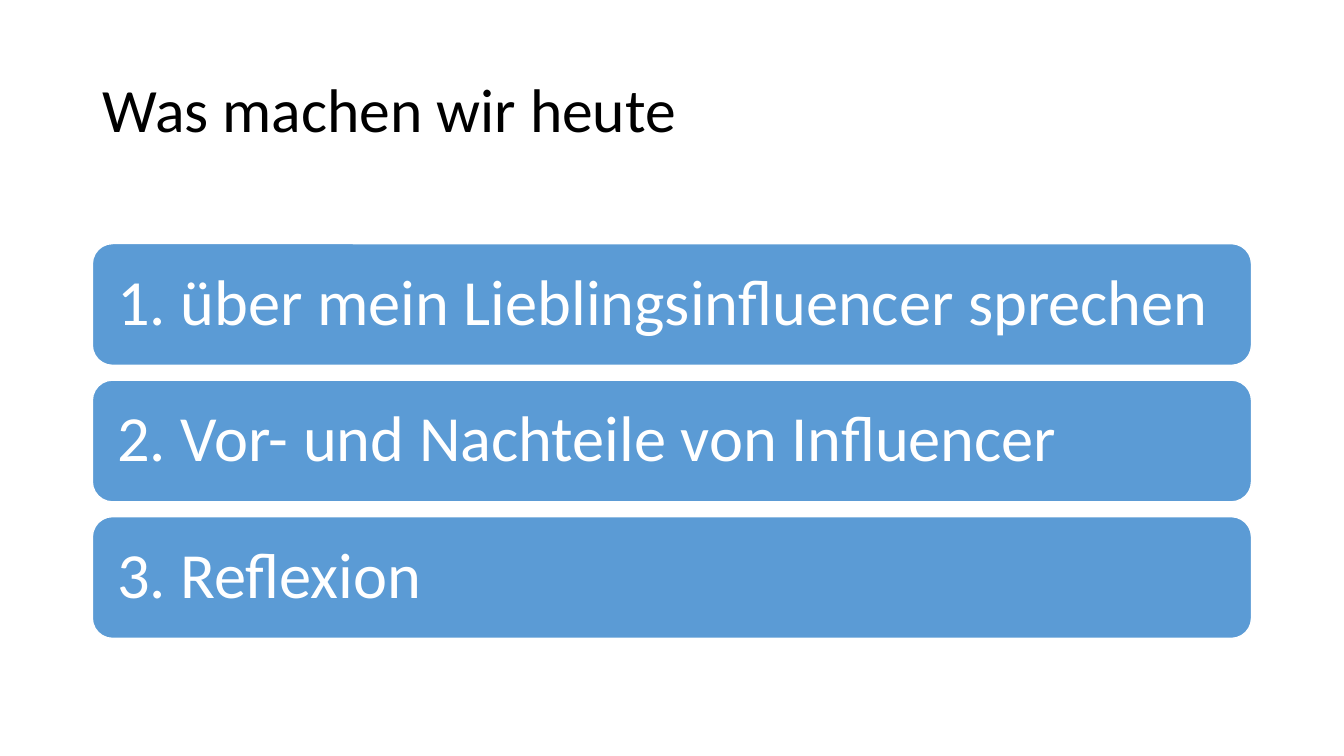
from pptx import Presentation
from pptx.dml.color import RGBColor
from pptx.enum.shapes import MSO_SHAPE
from pptx.enum.text import MSO_ANCHOR, PP_ALIGN
from pptx.util import Pt

PX = 9525  # EMU per px, 96 px to the inch
FONT = "Calibri"
BLACK = RGBColor(0x00, 0x00, 0x00)
WHITE = RGBColor(0xFF, 0xFF, 0xFF)
BLUE = RGBColor(0x5B, 0x9B, 0xD5)

LEFT, WIDTH = 88, 1104
CARD_TOP, CARD_HEIGHT, CARD_STEP = 232, 116, 130
CARD_INSET = 18
AGENDA = [
    "1. über mein Lieblingsinfluencer sprechen",
    "2. Vor- und Nachteile von Influencer",
    "3. Reflexion",
]


def write_line(frame, text, size, color):
    """Fill a text frame with one left-aligned, vertically centred line."""
    frame.word_wrap = True
    frame.vertical_anchor = MSO_ANCHOR.MIDDLE
    para = frame.paragraphs[0]
    para.alignment = PP_ALIGN.LEFT
    para.line_spacing = 0.9
    span = para.add_run()
    span.text = text
    span.font.name = FONT
    span.font.size = Pt(size)
    span.font.color.rgb = color


def set_title(page, text):
    title = page.shapes.title
    title.left, title.top = LEFT * PX, 38 * PX
    title.width, title.height = WIDTH * PX, 139 * PX
    write_line(title.text_frame, text, 44, BLACK)


def add_card(page, top, text):
    card = page.shapes.add_shape(
        MSO_SHAPE.ROUNDED_RECTANGLE,
        LEFT * PX, top * PX, WIDTH * PX, CARD_HEIGHT * PX,
    )
    card.shadow.inherit = False
    card.fill.solid()
    card.fill.fore_color.rgb = BLUE
    card.line.color.rgb = WHITE
    card.line.width = Pt(1)
    frame = card.text_frame
    frame.margin_left = frame.margin_right = CARD_INSET * PX
    frame.margin_top = frame.margin_bottom = CARD_INSET * PX
    write_line(frame, text, 46, WHITE)


def main():
    deck = Presentation()
    deck.slide_width, deck.slide_height = 1280 * PX, 720 * PX
    page = deck.slides.add_slide(deck.slide_layouts[5])  # title only

    # Heading
    set_title(page, "Was machen wir heute")

    # Agenda cards, evenly stacked
    for index, text in enumerate(AGENDA):
        add_card(page, CARD_TOP + index * CARD_STEP, text)

    deck.save("out.pptx")


if __name__ == "__main__":
    main()
